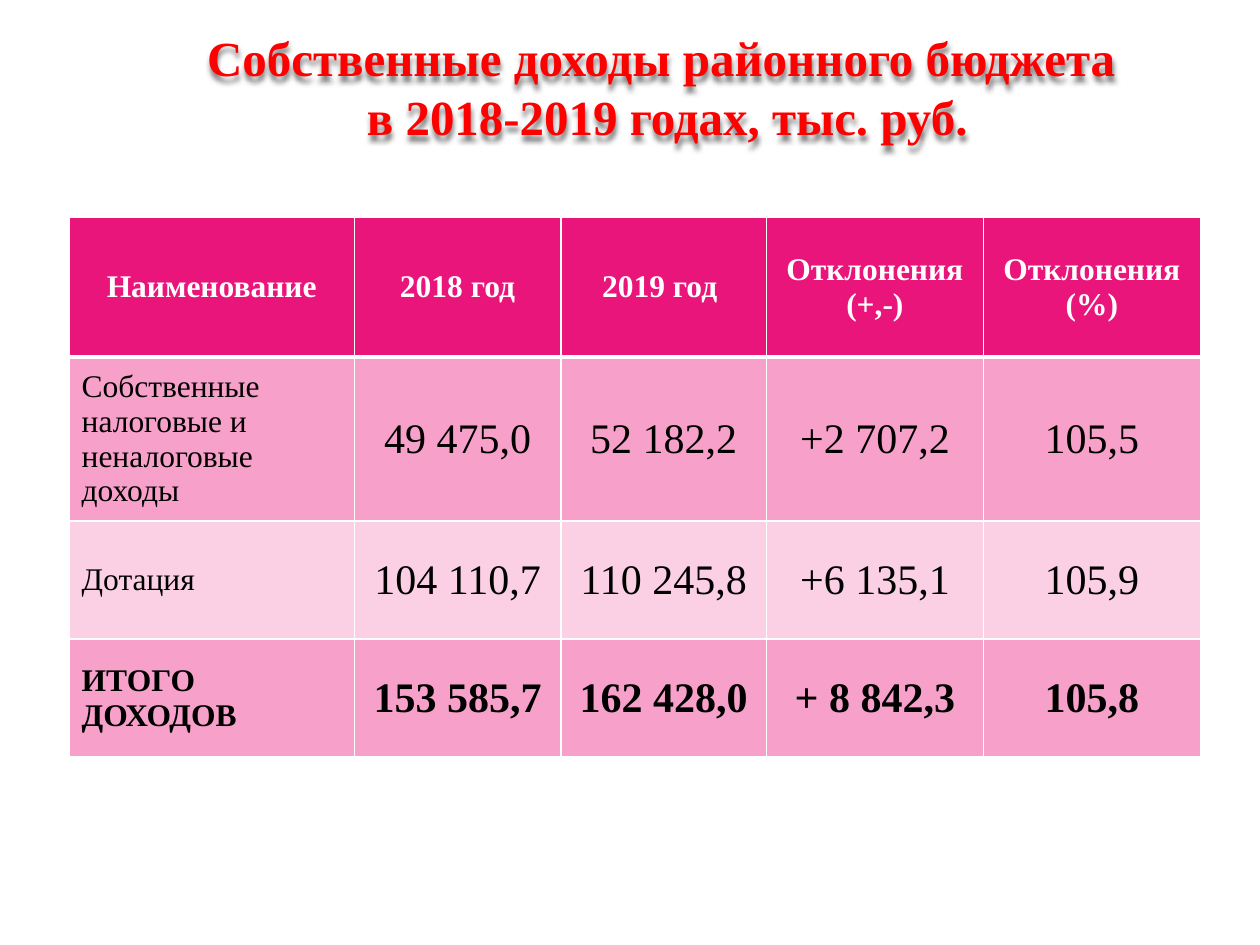
from lxml import etree
from pptx import Presentation
from pptx.dml.color import RGBColor
from pptx.enum import text
from pptx.oxml import ns
from pptx.util import Pt

FONT = "Times New Roman"
RED = RGBColor(255, 0, 0)
WHITE = RGBColor(255, 255, 255)
BLACK = RGBColor(0, 0, 0)
PINK = RGBColor(0xEA, 0x15, 0x7A)
ROSE = RGBColor(0xF7, 0xA1, 0xCA)
PALE = RGBColor(0xFB, 0xD0, 0xE4)

TITLE = ["Собственные доходы районного бюджета ", "в 2018-2019 годах, тыс. руб."]
ROWS = [
    ["Наименование", "2018 год", "2019 год ", "Отклонения (+,-)", "Отклонения (%)"],
    ["Собственные налоговые и неналоговые доходы",
     "49 475,0", "52 182,2", "+2 707,2", "105,5"],
    ["Дотация", "104 110,7", "110 245,8", "+6 135,1", "105,9"],
    ["ИТОГО ДОХОДОВ", "153 585,7", "162 428,0", "+ 8 842,3", "105,8"],
]
WIDTHS = [163, 118, 117.5, 124, 124]
HEIGHTS = [80, 67.5, 67.5, 67.5]


def add_run(para, words, size, color, bold):
    run = para.add_run()
    run.text = words
    run.font.name = FONT
    run.font.size = Pt(size)
    run.font.bold = bold
    run.font.color.rgb = color


def add_glow(shape):
    """Cast a soft grey shadow below the text of an unfilled shape."""
    group = etree.SubElement(shape._element.spPr, ns.qn("a:effectLst"))
    shade = etree.SubElement(group, ns.qn("a:outerShdw"), blurRad=str(Pt(3)),
                             dist=str(Pt(3)), dir="5400000", algn="tl", rotWithShape="0")
    color = etree.SubElement(shade, ns.qn("a:srgbClr"), val="000000")
    etree.SubElement(color, ns.qn("a:alpha"), val="50000")


def add_title(slide, left, top, width, height):
    box = slide.shapes.add_textbox(Pt(left), Pt(top), Pt(width), Pt(height))
    box.fill.background()
    add_glow(box)
    frame = box.text_frame
    frame.word_wrap = True
    frame.vertical_anchor = text.MSO_ANCHOR.MIDDLE
    para = frame.paragraphs[0]
    para.alignment = text.PP_ALIGN.CENTER
    for i, line in enumerate(TITLE):
        if i:
            para.add_line_break()
        add_run(para, line, 28, RED, True)


def set_edges(cell, base):
    """Draw white cell borders, the bottom one base points wide."""
    props = cell._tc.get_or_add_tcPr()
    for i, (side, width) in enumerate(zip("LRTB", (1, 1, 1, base))):
        line = etree.Element(ns.qn(f"a:ln{side}"), w=str(Pt(width)))
        fill = etree.SubElement(line, ns.qn("a:solidFill"))
        etree.SubElement(fill, ns.qn("a:srgbClr"), val=str(WHITE))
        props.insert(i, line)


def add_budget(slide, left, top):
    table = slide.shapes.add_table(
        len(ROWS), len(WIDTHS), Pt(left), Pt(top),
        Pt(sum(WIDTHS)), Pt(sum(HEIGHTS))).table
    for col, width in zip(table.columns, WIDTHS):
        col.width = Pt(width)
    for row, height in zip(table.rows, HEIGHTS):
        row.height = Pt(height)
    fills = [PINK, ROSE, PALE, ROSE]
    for r, row in enumerate(ROWS):
        head = r == 0
        for c, words in enumerate(row):
            cell = table.cell(r, c)
            cell.fill.solid()
            cell.fill.fore_color.rgb = fills[r]
            cell.vertical_anchor = text.MSO_ANCHOR.MIDDLE
            # Only the header's lower edge, shared with row 1, is thick.
            set_edges(cell, 3 if head else 1)
            para = cell.text_frame.paragraphs[0]
            label = c == 0 and not head
            para.alignment = text.PP_ALIGN.LEFT if label else text.PP_ALIGN.CENTER
            add_run(para, words, 18 if head or label else 24,
                    WHITE if head else BLACK, r in (0, len(ROWS) - 1))


def main():
    deck = Presentation()
    deck.slide_width, deck.slide_height = Pt(720), Pt(540)
    slide = deck.slides.add_slide(deck.slide_layouts[6])
    add_title(slide, 78.5, 21.5, 605.5, 55.5)
    add_budget(slide, 39.5, 124)
    deck.save("out.pptx")


if __name__ == "__main__":
    main()
